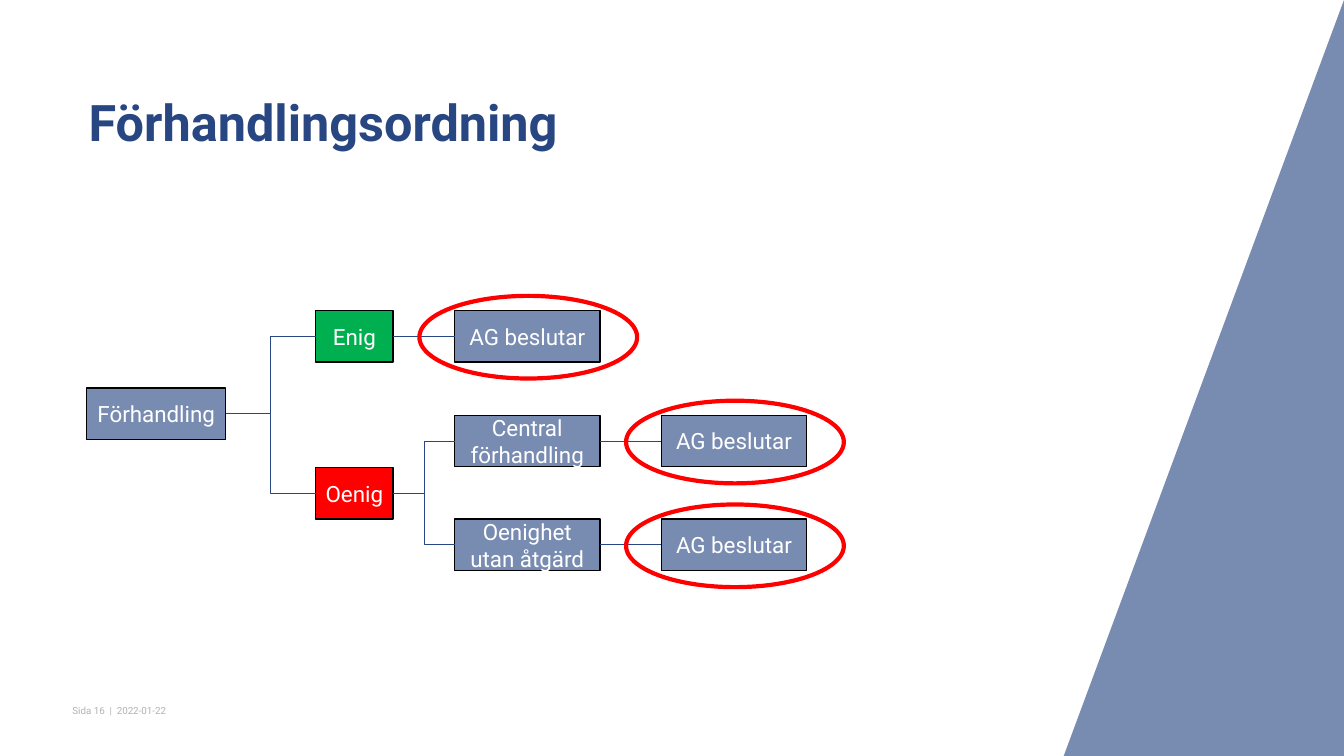
from dataclasses import dataclass

import lxml.etree
import pptx
import pptx.dml.color
import pptx.enum.shapes
import pptx.enum.text
import pptx.oxml.ns
import pptx.util

Inches = pptx.util.Inches
ShapeKind = pptx.enum.shapes.MSO_SHAPE
ConnectorKind = pptx.enum.shapes.MSO_CONNECTOR
Align = pptx.enum.text.PP_ALIGN
Anchor = pptx.enum.text.MSO_ANCHOR


@dataclass(frozen=True)
class Theme:
    font: str = "Roboto"
    blue: str = "788BB1"
    navy: str = "274682"
    green: str = "00B050"
    red: str = "FF0000"
    black: str = "000000"
    white: str = "FFFFFF"
    grey: str = "B2B2B2"
    title_size: float = 36
    box_size: float = 16
    footer_size: float = 7
    box_line: float = 1
    link_line: float = 0.5
    ring_line: float = 3


THEME = Theme()
BOX_HEIGHT = 0.51
RING_WIDTH, RING_HEIGHT = 2.16, 0.82

# Columns of the tree: left edge and box width
START = (0.86, 1.38)
OUTCOME = (3.13, 0.77)
STEP = (4.51, 1.44)
DECISION = (6.56, 1.44)


@dataclass(frozen=True)
class Node:
    text: str
    column: tuple[float, float]
    top: float
    fill: str = THEME.blue
    ringed: bool = False


NODES = {
    "start": Node("Förhandling", START, 3.85),
    "agreed": Node("Enig", OUTCOME, 3.08, THEME.green),
    "disagreed": Node("Oenig", OUTCOME, 4.64, THEME.red),
    "agreed decision": Node("AG beslutar", STEP, 3.08, ringed=True),
    "central": Node("Central förhandling", STEP, 4.12),
    "no action": Node("Oenighet utan åtgärd", STEP, 5.15),
    "central decision": Node("AG beslutar", DECISION, 4.12, ringed=True),
    "no action decision": Node("AG beslutar", DECISION, 5.15, ringed=True),
}

LINKS = [
    ("start", "agreed"),
    ("start", "disagreed"),
    ("disagreed", "no action"),
    ("disagreed", "central"),
    ("central", "central decision"),
    ("no action", "no action decision"),
    ("agreed", "agreed decision"),
]


def color(value: str) -> pptx.dml.color.RGBColor:
    return pptx.dml.color.RGBColor.from_string(value)


def style_text(shape, text: str, size: float, ink: str, bold: bool = False):
    shape.text_frame.text = text
    para = shape.text_frame.paragraphs[0]
    for span in para.runs:
        span.font.name = THEME.font
        span.font.size = pptx.util.Pt(size)
        span.font.bold = bold
        span.font.color.rgb = color(ink)
    return para


def set_line(shape, ink: str, width: float) -> None:
    shape.line.color.rgb = color(ink)
    shape.line.width = pptx.util.Pt(width)


def add_wedge(page) -> None:
    builder = page.shapes.build_freeform(Inches(13.33), 0)
    corners = [(Inches(13.33), Inches(7.5)), (Inches(10.55), Inches(7.5))]
    builder.add_line_segments(corners, close=True)
    wedge = builder.convert_to_shape()
    wedge.shadow.inherit = False
    wedge.fill.solid()
    wedge.fill.fore_color.rgb = color(THEME.blue)
    wedge.line.fill.background()


def add_node(page, node: Node):
    left, width = node.column
    box = page.shapes.add_shape(
        ShapeKind.RECTANGLE, Inches(left), Inches(node.top), Inches(width), Inches(BOX_HEIGHT)
    )
    box.shadow.inherit = False
    box.fill.solid()
    box.fill.fore_color.rgb = color(node.fill)
    set_line(box, THEME.black, THEME.box_line)
    box.text_frame.word_wrap = " " in node.text
    box.text_frame.vertical_anchor = Anchor.MIDDLE
    para = style_text(box, node.text, THEME.box_size, THEME.white)
    para.alignment = Align.CENTER
    return box


def add_link(page, source, target) -> None:
    level = source.top == target.top
    kind = ConnectorKind.STRAIGHT if level else ConnectorKind.ELBOW
    link = page.shapes.add_connector(kind, 0, 0, 0, 0)
    link.begin_connect(source, 3)
    link.end_connect(target, 1)
    set_line(link, THEME.navy, THEME.link_line)
    lxml.etree.SubElement(link._element.spPr, pptx.oxml.ns.qn("a:effectLst"))


def add_ring(page, node: Node) -> None:
    left, width = node.column
    ring = page.shapes.add_shape(
        ShapeKind.OVAL,
        Inches(left + (width - RING_WIDTH) / 2 + 0.01),
        Inches(node.top + (BOX_HEIGHT - RING_HEIGHT) / 2 + 0.01),
        Inches(RING_WIDTH),
        Inches(RING_HEIGHT),
    )
    ring.shadow.inherit = False
    ring.fill.background()
    set_line(ring, THEME.red, THEME.ring_line)


def main() -> None:
    deck = pptx.Presentation()
    deck.slide_width, deck.slide_height = Inches(13.33), Inches(7.5)
    page = deck.slides.add_slide(deck.slide_layouts[6])

    # Background wedge and footer
    add_wedge(page)
    footer = page.shapes.add_textbox(Inches(0.62), Inches(6.94), Inches(1.15), Inches(0.22))
    footer.text_frame.word_wrap = False
    style_text(footer, "Sida 16  |  2022-01-22", THEME.footer_size, THEME.grey)

    # Title
    title = page.shapes.add_textbox(Inches(0.78), Inches(0.92), Inches(6.56), Inches(1.12))
    title.text_frame.word_wrap = True
    heading = style_text(title, "Förhandlingsordning", THEME.title_size, THEME.navy, bold=True)
    heading.line_spacing = 0.9

    # Decision tree
    boxes = {name: add_node(page, node) for name, node in NODES.items()}
    for source, target in LINKS:
        add_link(page, boxes[source], boxes[target])

    # Rings around the employer's decisions
    for node in NODES.values():
        if node.ringed:
            add_ring(page, node)

    deck.save("out.pptx")


if __name__ == "__main__":
    main()
